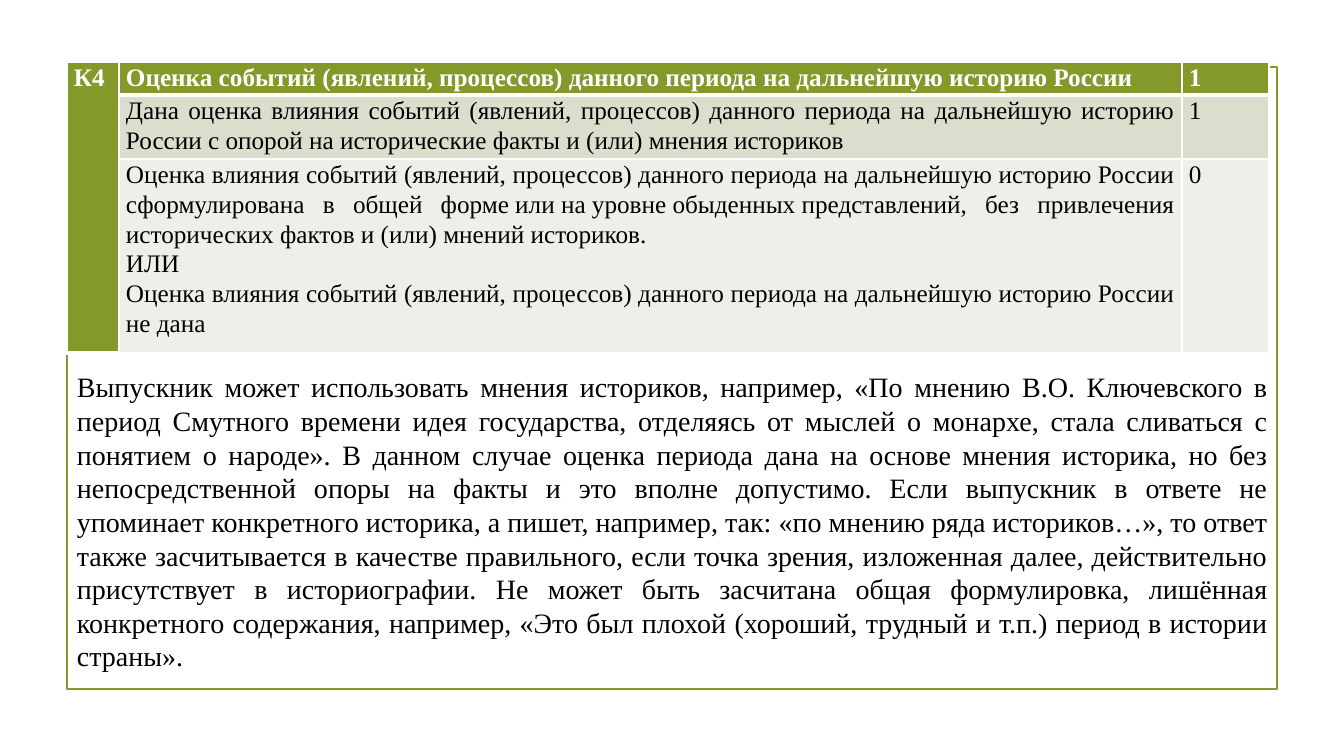
from dataclasses import dataclass

from lxml import etree
from pptx import Presentation
from pptx import util as u
from pptx.dml.color import RGBColor
from pptx.enum import shapes, text
from pptx.oxml import ns

SLIDE_W, SLIDE_H = 1344, 756


@dataclass(frozen=True)
class Theme:
    font: str = "Times New Roman"
    white: str = "FFFFFF"
    black: str = "000000"
    olive: str = "83992A"
    row_dark: str = "D9DECD"
    row_light: str = "EDEFE8"
    table_pt: int = 18
    body_pt: int = 20
    frame_pt: float = 1.25


@dataclass(frozen=True)
class Criterion:
    """One row of the scoring table."""
    paragraphs: tuple[str, ...]
    score: str
    height: int
    fill: str
    heading: bool = False


THEME = Theme()
NBSP = chr(160)
TIED_WORDS = NBSP.join("форме или на уровне обыденных представлений,".split())

CRITERION_CODE = "К4"
COLUMN_WIDTHS = (52, 1063, 87)
CRITERIA = (
    Criterion(
        ("Оценка событий (явлений, процессов) данного периода на дальнейшую историю России",),
        "1", 33, THEME.olive, heading=True),
    Criterion(
        ("Дана оценка влияния событий (явлений, процессов) данного периода на дальнейшую "
         "историю России с опорой на исторические факты и (или) мнения историков",),
        "1", 64, THEME.row_dark),
    Criterion(
        ("Оценка влияния событий (явлений, процессов) данного периода на дальнейшую историю "
         f"России сформулирована в общей {TIED_WORDS} без привлечения исторических фактов "
         "и (или) мнений историков.",
         "ИЛИ",
         "Оценка влияния событий (явлений, процессов) данного периода на дальнейшую историю "
         "России не дана"),
        "0", 194, THEME.row_light),
)
COMMENTARY = (
    "Выпускник может использовать мнения историков, например, «По мнению В.О. Ключевского "
    "в период Смутного времени идея государства, отделяясь от мыслей о монархе, стала "
    "сливаться с понятием о народе». В данном случае оценка периода дана на основе мнения "
    "историка, но без непосредственной опоры на факты и это вполне допустимо. Если выпускник "
    "в ответе не упоминает конкретного историка, а пишет, например, так: «по мнению ряда "
    "историков…», то ответ также засчитывается в качестве правильного, если точка зрения, "
    "изложенная далее, действительно присутствует в историографии. Не может быть засчитана "
    "общая формулировка, лишённая конкретного содержания, например, «Это был плохой (хороший, "
    "трудный и т.п.) период в истории страны»."
)


def px(length: int) -> u.Emu:
    return u.Emu(round(length * u.Inches(1) / 100.8))


def write(frame, paragraphs: tuple[str, ...], *, size: int, color: str = THEME.black,
          bold: bool = False, spacing: float | None = None) -> None:
    frame.word_wrap = True
    for index, wording in enumerate(paragraphs):
        paragraph = frame.add_paragraph() if index else frame.paragraphs[0]
        paragraph.alignment = text.PP_ALIGN.JUSTIFY
        if spacing:
            paragraph.line_spacing = spacing
        run = paragraph.add_run()
        run.text = wording
        run.font.name = THEME.font
        run.font.size = u.Pt(size)
        run.font.bold = bold
        run.font.color.rgb = RGBColor.from_string(color)


def add_borders(cell, bottom_pt: int) -> None:
    properties = cell._tc.get_or_add_tcPr()
    for side, width in (("L", 1), ("R", 1), ("T", 1), ("B", bottom_pt)):
        line = etree.SubElement(properties, ns.qn(f"a:ln{side}"), w=str(u.Pt(width)))
        fill = etree.SubElement(line, ns.qn("a:solidFill"))
        etree.SubElement(fill, ns.qn("a:srgbClr"), val=THEME.white)


def style_cell(cell, fill: str, heading: bool) -> None:
    cell.margin_left = cell.margin_right = px(7)
    cell.margin_top = cell.margin_bottom = 0
    add_borders(cell, bottom_pt=3 if heading else 1)
    cell.fill.solid()
    cell.fill.fore_color.rgb = RGBColor.from_string(fill)


def fill_cell(cell, paragraphs: tuple[str, ...], heading: bool) -> None:
    write(cell.text_frame, paragraphs, size=THEME.table_pt, bold=heading, spacing=1.07,
          color=THEME.white if heading else THEME.black)


def add_frame(slide) -> None:
    frame = slide.shapes.add_shape(
        shapes.MSO_SHAPE.RECTANGLE, px(67), px(67), px(1210), px(622))
    frame.shadow.inherit = False
    frame.fill.background()
    frame.line.color.rgb = RGBColor.from_string(THEME.olive)
    frame.line.width = u.Pt(THEME.frame_pt)


def add_criteria(slide) -> None:
    table = slide.shapes.add_table(
        len(CRITERIA), len(COLUMN_WIDTHS), px(67), px(62),
        px(sum(COLUMN_WIDTHS)), px(sum(row.height for row in CRITERIA))).table
    table.first_row = table.horz_banding = False
    for column, width in zip(table.columns, COLUMN_WIDTHS):
        column.width = px(width)
    for index, criterion in enumerate(CRITERIA):
        table.rows[index].height = px(criterion.height)
        code, wording, score = table.rows[index].cells
        style_cell(code, THEME.olive, heading=True)
        for cell, paragraphs in ((wording, criterion.paragraphs), (score, (criterion.score,))):
            style_cell(cell, criterion.fill, criterion.heading)
            fill_cell(cell, paragraphs, criterion.heading)
    table.cell(0, 0).merge(table.cell(len(CRITERIA) - 1, 0))
    fill_cell(table.cell(0, 0), (CRITERION_CODE,), heading=True)


def add_commentary(slide) -> None:
    commentary = slide.shapes.add_textbox(px(67), px(365), px(1211), px(316))
    commentary.text_frame.auto_size = text.MSO_AUTO_SIZE.SHAPE_TO_FIT_TEXT
    write(commentary.text_frame, (COMMENTARY,), size=THEME.body_pt)


def main() -> None:
    deck = Presentation()
    deck.slide_width, deck.slide_height = px(SLIDE_W), px(SLIDE_H)
    slide = deck.slides.add_slide(deck.slide_layouts[6])
    add_frame(slide)
    add_criteria(slide)
    add_commentary(slide)
    deck.save("out.pptx")


if __name__ == "__main__":
    main()
